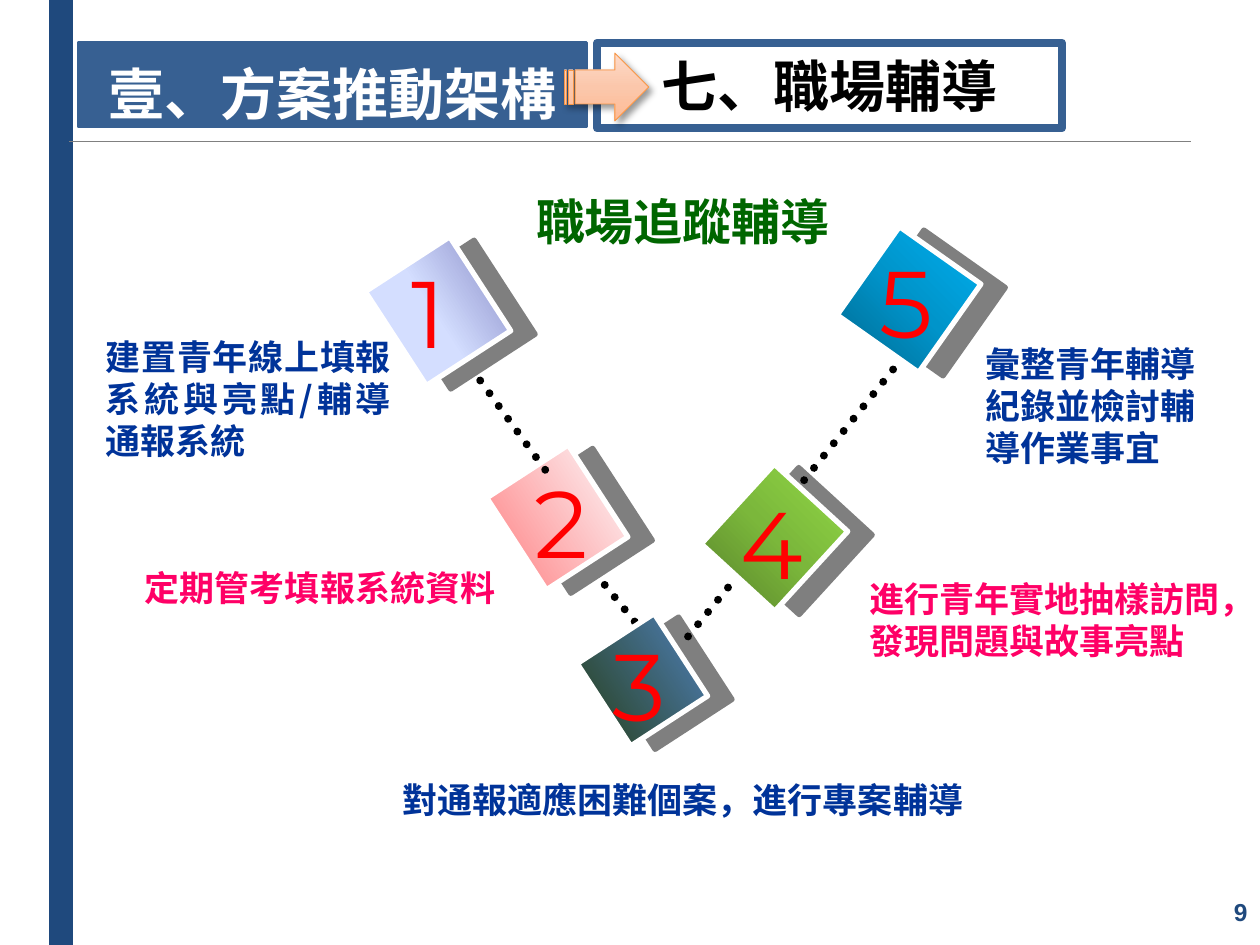
from dataclasses import dataclass

from lxml.etree import SubElement
from pptx import Presentation
from pptx.dml.color import RGBColor
from pptx.enum.dml import MSO_LINE
from pptx.enum.shapes import MSO_CONNECTOR, MSO_SHAPE
from pptx.enum.text import MSO_ANCHOR as Anchor, MSO_AUTO_SIZE, PP_ALIGN as Align
from pptx.oxml.ns import qn
from pptx.util import Cm, Pt


@dataclass(frozen=True)
class Theme:
    """Colours, fonts and type sizes of the deck."""
    navy: str = "1F497D"
    header: str = "376092"
    white: str = "FFFFFF"
    black: str = "000000"
    rule: str = "808080"
    orange: str = "F79646"
    green: str = "006600"
    blue: str = "003399"
    pink: str = "FF0066"
    red: str = "FF0000"
    cjk: str = "Noto Sans CJK SC"
    digit: str = "Montserrat"
    latin: str = "Arial"
    header_size: int = 32
    title_size: int = 28
    note_size: int = 20
    digit_size: int = 54
    page_size: int = 14


@dataclass(frozen=True)
class Step:
    """One numbered square with its digit position and note."""
    square: tuple
    turn: float
    stops: tuple
    angle: int | None
    digit: tuple
    note: tuple
    text: str
    color: str
    align: Align = Align.LEFT


THEME = Theme()
STEPS = (
    Step((7.7, 5.26, 2.26, 2.03), 57,
         ((0, "8488C4"), (53, "D4DEFF"), (83, "D4DEFF"), (100, "96AB94")), 90,
         (8.05, 5), (1.88, 6.63, 6.25, 2.82),
         "建置青年線上填報系統與亮點/輔導通報系統", THEME.blue, Align.JUSTIFY),
    Step((10.13, 9.45, 2.21, 1.96), 57, ((0, "FF7C80"), (100, "FCFCFC")), 270,
         (10.52, 9.22), (2.67, 11.3, 7.77, 1.12),
         "定期管考填報系統資料", THEME.pink),
    Step((11.96, 12.78, 1.98, 1.85), 57, ((0, "4F81BD"), (100, "263E17")), 90,
         (12.09, 12.52), (7.29, 15.57, 12.95, 1.12),
         "對通報適應困難個案，進行專案輔導", THEME.blue, Align.CENTER),
    Step((14.61, 9.75, 2.01, 2.18), 42.5,
         ((0, "57812A"), (50, "7BB73B"), (100, "92DA46")), None,
         (14.68, 9.65), (17.27, 11.51, 8.13, 1.96),
         "進行青年實地抽樣訪問，發現問題與故事亮點", THEME.pink),
    Step((17.32, 4.95, 2.01, 2.18), 35.2,
         ((0, "00688E"), (50, "0094CA"), (100, "00B0F0")), None,
         (17.48, 4.8), (19.61, 6.78, 5.13, 2.82),
         "彙整青年輔導紀錄並檢討輔導作業事宜", THEME.blue),
)
LINK_BEHIND = (12.19, 11.79, 13.08, 12.88)
LINKS_IN_FRONT = ((9.68, 7.67, 11.07, 9.58), (13.87, 12.83, 14.81, 11.68),
                  (16.21, 9.68, 18.01, 7.44))


def lengths(values):
    """Turn centimetre numbers into lengths."""
    return [Cm(value) for value in values]


def write(shape, text, size, color, font=THEME.cjk, bold=True, align=Align.LEFT,
          anchor=Anchor.TOP, wrap=True, spacing=None):
    """Put one formatted run into a shape."""
    frame = shape.text_frame
    frame.word_wrap = wrap
    frame.auto_size = MSO_AUTO_SIZE.NONE
    frame.vertical_anchor = anchor
    para = frame.paragraphs[0]
    para.alignment = align
    if spacing:
        para.line_spacing = spacing
    span = para.add_run()
    span.text = text
    span.font.size, span.font.bold, span.font.name = Pt(size), bold, font
    span.font.color.rgb = RGBColor.from_string(color)
    SubElement(span.font._element, qn("a:ea"), typeface=font)


def add_text(page, bounds, text, size, color, **style):
    """Add a text box."""
    box = page.shapes.add_textbox(*lengths(bounds))
    write(box, text, size, color, **style)


def add_block(page, kind, bounds, fill=None, line=None, weight=1):
    """Add a preset shape without a theme shadow."""
    block = page.shapes.add_shape(kind, *lengths(bounds))
    block.shadow.inherit = False
    if fill:
        block.fill.solid()
        block.fill.fore_color.rgb = RGBColor.from_string(fill)
    if line:
        block.line.color.rgb = RGBColor.from_string(line)
        block.line.width = Pt(weight)
    else:
        block.line.fill.background()
    return block


def set_gradient(shape, stops, angle):
    """Fill with a linear gradient, or a corner one when angle is None."""
    shape.fill.gradient()
    gradient = shape._element.spPr.find(qn("a:gradFill"))
    for child in list(gradient):
        gradient.remove(child)
    gradient.set("rotWithShape", "1")
    stop_list = SubElement(gradient, qn("a:gsLst"))
    for position, color in stops:
        stop = SubElement(stop_list, qn("a:gs"), pos=str(position * 1000))
        SubElement(stop, qn("a:srgbClr"), val=color)
    if angle is None:
        corner = SubElement(gradient, qn("a:path"), path="circle")
        SubElement(corner, qn("a:fillToRect"), t="100000", r="100000")
    else:
        SubElement(gradient, qn("a:lin"), ang=str(angle * 60000), scaled="1")


def set_shadow(shape, opacity, blur, distance, angle):
    """Cast a black outer shadow that ignores the rotation."""
    effects = shape._element.spPr.find(qn("a:effectLst"))
    shadow = SubElement(effects, qn("a:outerShdw"), blurRad=str(Pt(blur)),
                        dist=str(Pt(distance)), dir=str(angle * 60000),
                        algn="ctr", rotWithShape="0")
    color = SubElement(shadow, qn("a:srgbClr"), val=THEME.black)
    SubElement(color, qn("a:alpha"), val=str(opacity * 1000))


def add_line(page, ends, color, weight, dotted=False):
    """Add a straight line, optionally with round dots."""
    line = page.shapes.add_connector(MSO_CONNECTOR.STRAIGHT, *lengths(ends))
    line.line.color.rgb = RGBColor.from_string(color)
    line.line.width = Pt(weight)
    if dotted:
        line.line.dash_style = MSO_LINE.ROUND_DOT
        line.line._get_or_add_ln().set("cap", "rnd")
    SubElement(line._element.spPr, qn("a:effectLst"))


def add_square(page, step):
    """Add the rotated square of a step."""
    square = add_block(page, MSO_SHAPE.RECTANGLE, step.square, line=THEME.white, weight=3)
    square.rotation = step.turn
    set_gradient(square, step.stops, step.angle)
    set_shadow(square, 50, 0, 14.1, 8)


def add_header(page):
    """Add the two section boxes and the arrow between them."""
    section = add_block(page, MSO_SHAPE.RECTANGLE, (12.04, 0.86, 9.37, 1.73),
                        THEME.white, THEME.header, 4.5)
    write(section, "七、職場輔導", THEME.header_size, THEME.black,
          align=Align.CENTER, anchor=Anchor.MIDDLE, wrap=False)
    chapter = add_block(page, MSO_SHAPE.RECTANGLE, (1.57, 0.86, 10.26, 1.7),
                        THEME.header, THEME.header, 1.5)
    write(chapter, "壹、方案推動架構", THEME.header_size, THEME.white,
          align=Align.CENTER, anchor=Anchor.MIDDLE, wrap=False, spacing=1.25)
    arrow = add_block(page, MSO_SHAPE.STRIPED_RIGHT_ARROW, (11.38, 1.07, 1.7, 1.37),
                      line=THEME.orange, weight=0.5)
    set_gradient(arrow, ((0, "FDDBCA"), (50, "FBC7AB"), (100, "FEBB95")), 90)
    set_shadow(arrow, 40, 4, 3, 45)


def main():
    """Build the slide and save the deck."""
    deck = Presentation()
    deck.slide_width, deck.slide_height = Cm(25.4), Cm(19.05)
    page = deck.slides.add_slide(deck.slide_layouts[5])
    title = page.shapes.title
    title.left, title.top, title.width, title.height = lengths((9.04, 3.73, 9.45, 2.29))
    write(title, "職場追蹤輔導", THEME.title_size, THEME.green, align=Align.CENTER)
    add_block(page, MSO_SHAPE.RECTANGLE, (0.99, 0, 0.48, 19.05), THEME.navy)
    add_line(page, (1.4, 2.84, 24, 2.84), THEME.rule, 0.25)
    add_line(page, LINK_BEHIND, THEME.black, 4.5, dotted=True)
    for step in STEPS:
        add_square(page, step)
    for ends in LINKS_IN_FRONT:
        add_line(page, ends, THEME.black, 4.5, dotted=True)
    for number, step in enumerate(STEPS, start=1):
        add_text(page, step.note, step.text, THEME.note_size, step.color, align=step.align)
        add_text(page, (*step.digit, 1.4, 2.57), str(number), THEME.digit_size,
                 THEME.red, font=THEME.digit, bold=False)
    add_text(page, (22.07, 17.81, 3.33, 1.12), "9", THEME.page_size, THEME.navy,
             font=THEME.latin, align=Align.RIGHT, anchor=Anchor.MIDDLE)
    add_header(page)
    deck.save("out.pptx")


if __name__ == "__main__":
    main()
